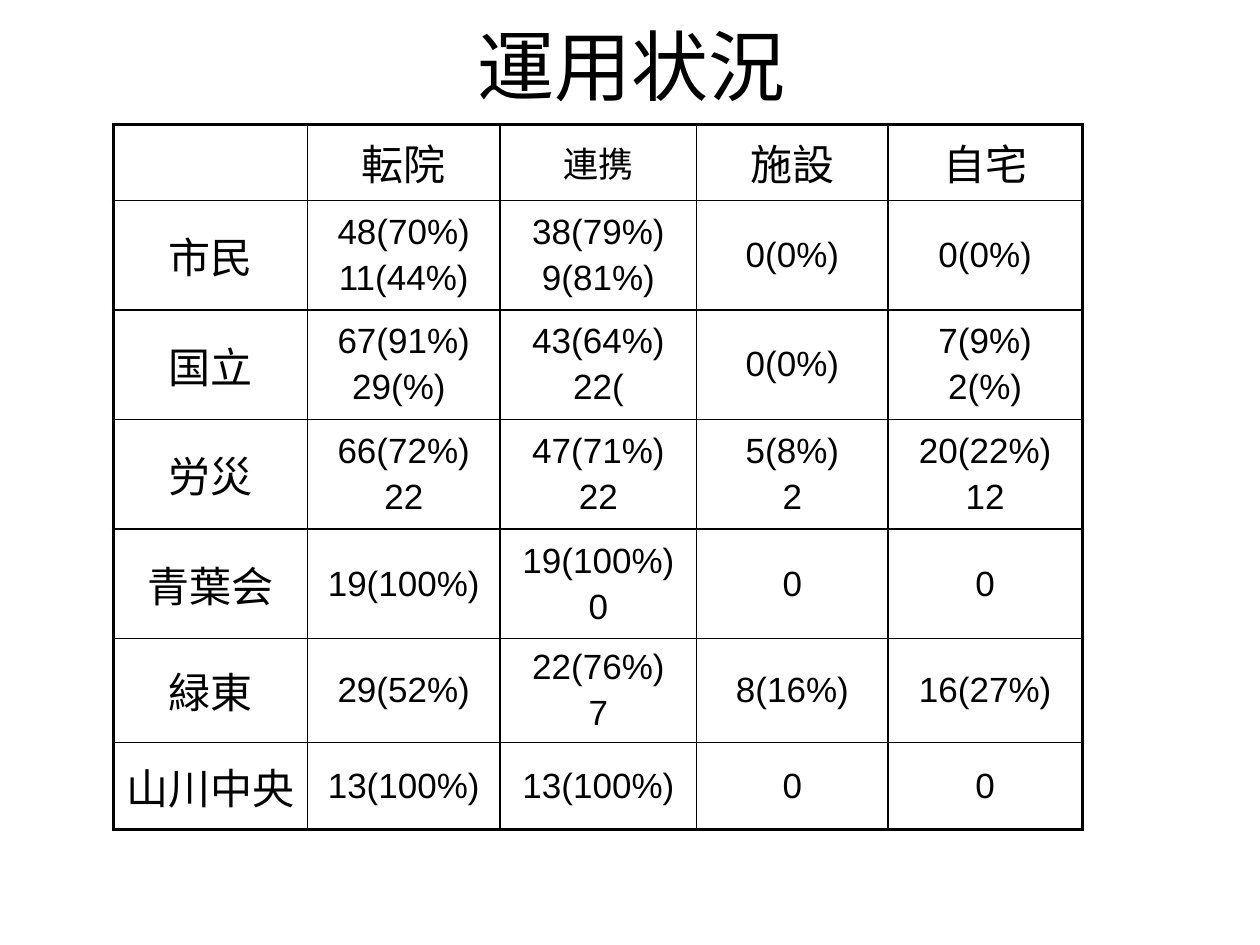
from dataclasses import dataclass

from lxml.etree import SubElement
from pptx import Presentation
from pptx.dml.color import RGBColor
from pptx.enum.text import MSO_ANCHOR, PP_ALIGN
from pptx.oxml.ns import qn
from pptx.util import Inches, Pt

BLACK = "000000"
LABEL_SIZE, VALUE_SIZE = 24, 20
THIN, THICK = 1, 2.25


@dataclass
class HospitalRow:
    name: str
    height: float
    values: list[str]


HEADER_HEIGHT = 0.6
HEADERS = ["", "転院", "連携", "施設", "自宅"]
COLUMN_WIDTHS = [1.54, 1.53, 1.56, 1.52, 1.54]

# A line break in a value starts a new paragraph
HOSPITALS = [
    HospitalRow("市民", 0.87, ["48(70%)\n11(44%)", "38(79%)\n9(81%)", "0(0%)", "0(0%)"]),
    HospitalRow("国立", 0.87, ["67(91%)\n29(%) ", "43(64%)\n22(", "0(0%)", "7(9%)\n2(%)"]),
    HospitalRow("労災", 0.87, ["66(72%)\n22", "47(71%)\n22", "5(8%)\n2", "20(22%)\n12"]),
    HospitalRow("青葉会", 0.87, ["19(100%)", "19(100%)\n0", "0", "0"]),
    HospitalRow("緑東", 0.77, ["29(52%)", "22(76%)\n7", "8(16%)", "16(27%)"]),
    HospitalRow("山川中央", 0.69, ["13(100%)", "13(100%)", "0", "0"]),
]


def color(value: str) -> RGBColor:
    return RGBColor.from_string(value)


def style_paragraph(paragraph, font_name: str, size: float) -> None:
    paragraph.alignment = PP_ALIGN.CENTER
    paragraph.font.name = font_name
    paragraph.font.size = Pt(size)
    paragraph.font.color.rgb = color(BLACK)


def set_space_before(paragraph, percent: int) -> None:
    spacing = SubElement(paragraph._p.get_or_add_pPr(), qn("a:spcBef"))
    SubElement(spacing, qn("a:spcPct"), val=str(percent * 1000))


def set_border(cell, side: str, width: float) -> None:
    line = SubElement(cell._tc.get_or_add_tcPr(), qn(f"a:ln{side}"), w=str(Pt(width)))
    fill = SubElement(line, qn("a:solidFill"))
    SubElement(fill, qn("a:srgbClr"), val=BLACK)


def fill_cell(cell, text: str, size: float) -> None:
    cell.vertical_anchor = MSO_ANCHOR.MIDDLE
    cell.text = text
    for paragraph in cell.text_frame.paragraphs:
        set_space_before(paragraph, 20)
        style_paragraph(paragraph, "Arial", size)


def add_title(page, text: str) -> None:
    box = page.shapes.add_textbox(Inches(0.51), Inches(-0.11), Inches(9), Inches(1.25))
    frame = box.text_frame
    frame.word_wrap = True
    frame.vertical_anchor = MSO_ANCHOR.MIDDLE
    frame.text = text
    style_paragraph(frame.paragraphs[0], "Calibri", 44)


def add_status_table(page) -> None:
    rows = [HEADERS] + [[hospital.name, *hospital.values] for hospital in HOSPITALS]
    heights = [HEADER_HEIGHT] + [hospital.height for hospital in HOSPITALS]
    last_row, last_column = len(rows) - 1, len(HEADERS) - 1

    table = page.shapes.add_table(
        len(rows), len(HEADERS), Inches(0.9), Inches(0.99),
        Inches(sum(COLUMN_WIDTHS)), Inches(sum(heights)),
    ).table
    table.first_row = table.horz_banding = False
    for column, width in zip(table.columns, COLUMN_WIDTHS):
        column.width = Inches(width)
    for row, height in zip(table.rows, heights):
        row.height = Inches(height)

    for i, texts in enumerate(rows):
        for j, text in enumerate(texts):
            cell = table.cell(i, j)
            is_label = (i == 0 or j == 0) and text != "連携"
            # The first hospital's label keeps the label size as well
            fill_cell(cell, text, LABEL_SIZE if is_label else VALUE_SIZE)
            # Thick outer frame, thin inner grid
            outer = {"L": j == 0, "R": j == last_column, "T": i == 0, "B": i == last_row}
            for side, is_outer in outer.items():
                set_border(cell, side, THICK if is_outer else THIN)
            cell.fill.background()


def main() -> None:
    deck = Presentation()
    deck.slide_width, deck.slide_height = Inches(10), Inches(7.5)
    page = deck.slides.add_slide(deck.slide_layouts[6])
    add_title(page, "運用状況")
    add_status_table(page)
    deck.save("out.pptx")


if __name__ == "__main__":
    main()
